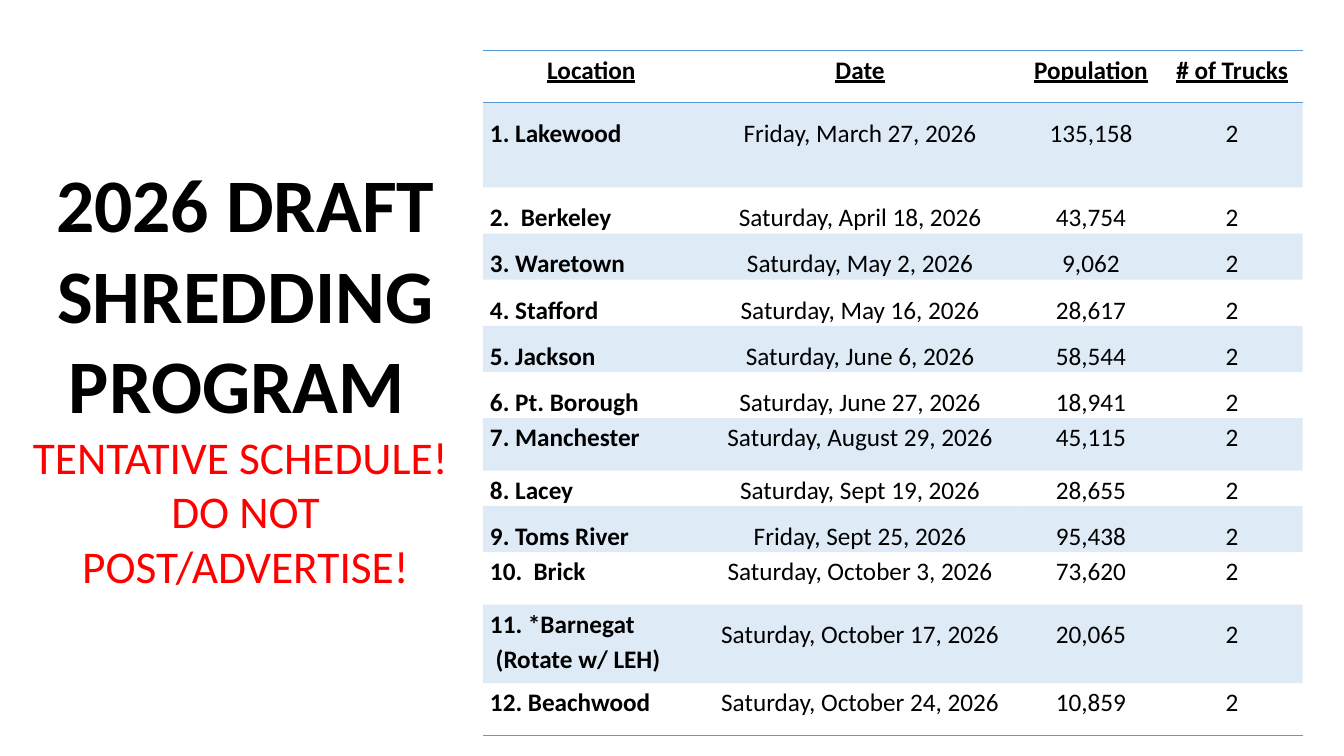
from dataclasses import dataclass

from lxml.etree import SubElement
from pptx import Presentation
from pptx.dml.color import RGBColor
from pptx.enum.text import MSO_ANCHOR, MSO_AUTO_SIZE, PP_ALIGN
from pptx.oxml import parse_xml
from pptx.oxml.ns import nsdecls, qn
from pptx.util import Inches, Pt


@dataclass(frozen=True)
class Theme:
    font: str = "Calibri"
    text: str = "000000"
    warning: str = "FF0000"
    accent: str = "5B9BD5"
    band_opacity: int = 20
    title_size: float = 54
    warning_size: float = 32.4
    table_size: float = 18


THEME = Theme()
NO_STYLE = "{2D5ABB26-0587-4C30-8999-92F81FD0307C}"
TIGHT, ROOMY = 1.15, 1.5
COLUMN_WIDTHS = (2.15, 3.18, 1.4, 1.4)
HEADERS = ("Location", "Date", "Population", "# of Trucks")
HEADER_HEIGHT = 0.52
TRUCKS = "2"
# location, date, population, row height, line spacing
STOPS = [
    ("1. Lakewood", "Friday, March 27, 2026", "135,158", 0.84, ROOMY),
    ("2.  Berkeley", "Saturday, April 18, 2026", "43,754", 0.42, ROOMY),
    ("3. Waretown", "Saturday, May 2, 2026", "9,062", 0.42, ROOMY),
    ("4. Stafford", "Saturday, May 16, 2026", "28,617", 0.42, ROOMY),
    ("5. Jackson", "Saturday, June 6, 2026", "58,544", 0.42, ROOMY),
    ("6. Pt. Borough", "Saturday, June 27, 2026", "18,941", 0.42, ROOMY),
    ("7. Manchester", "Saturday, August 29, 2026", "45,115", 0.52, TIGHT),
    ("8. Lacey", "Saturday, Sept 19, 2026", "28,655", 0.35, TIGHT),
    ("9. Toms River", "Friday, Sept 25, 2026", "95,438", 0.42, ROOMY),
    ("10.  Brick", "Saturday, October 3, 2026", "73,620", 0.52, TIGHT),
    ("11. *Barnegat\n (Rotate w/ LEH)", "Saturday, October 17, 2026", "20,065", 0.78, ROOMY),
    ("12. Beachwood", "Saturday, October 24, 2026", "10,859", 0.52, TIGHT),
]


def style_font(font, size, color, bold, underline=False):
    font.name = THEME.font
    font.size = Pt(size)
    font.color.rgb = RGBColor.from_string(color)
    font.bold = bold
    font.underline = underline


def add_title(slide):
    sp = slide.shapes.title
    sp.left, sp.top = Inches(0.08), Inches(3.09)
    sp.width, sp.height = Inches(4.71), Inches(1.8)
    tf = sp.text_frame
    tf.word_wrap = True
    tf.auto_size = MSO_AUTO_SIZE.NONE
    tf.vertical_anchor = MSO_ANCHOR.MIDDLE
    tf.margin_bottom = Inches(0.6)
    p = tf.paragraphs[0]
    p.alignment = PP_ALIGN.CENTER
    r = p.add_run()
    r.text = "2026 DRAFT SHREDDING PROGRAM "
    style_font(r.font, THEME.title_size, THEME.text, True)
    for line in ("TENTATIVE SCHEDULE! ", "DO NOT POST/ADVERTISE!"):
        p.add_line_break()
        r = p.add_run()
        r.text = line
        style_font(r.font, THEME.warning_size, THEME.warning, False)


def fill_cell(cell, banded):
    if not banded:
        cell.fill.background()
        return
    cell.fill.solid()
    cell.fill.fore_color.rgb = RGBColor.from_string(THEME.accent)
    color = cell._tc.tcPr.find(".//" + qn("a:srgbClr"))
    SubElement(color, qn("a:alpha"), val=str(THEME.band_opacity * 1000))


def add_borders(cell, sides):
    """Draw accent rules; sides holds "T" and/or "B"."""
    for side in sorted(sides):
        cell._tc.tcPr.insert(0, parse_xml(
            f'<a:ln{side} {nsdecls("a")} w="12700"><a:solidFill>'
            f'<a:srgbClr val="{THEME.accent}"/></a:solidFill></a:ln{side}>'))


def write_cell(cell, text, spacing, align, bold, underline=False):
    cell.margin_left = cell.margin_right = Inches(0.07)
    cell.margin_top = cell.margin_bottom = 0
    cell.text = text
    paragraphs = cell.text_frame.paragraphs
    multiline = len(paragraphs) > 1
    for p in paragraphs:
        p.alignment = align
        p.line_spacing = TIGHT if multiline else spacing
        p.space_after = Pt(0 if multiline else 10)
        style_font(p.font, THEME.table_size, THEME.text, bold, underline)


def add_schedule(slide):
    heights = [HEADER_HEIGHT] + [stop[3] for stop in STOPS]
    frame = slide.shapes.add_table(
        len(heights), len(HEADERS), Inches(4.79), Inches(0.5),
        Inches(sum(COLUMN_WIDTHS)), Inches(sum(heights)))
    table = frame.table
    table.first_row = table.horz_banding = False
    table._tbl.tblPr.find(qn("a:tableStyleId")).text = NO_STYLE
    for column, width in zip(table.columns, COLUMN_WIDTHS):
        column.width = Inches(width)
    for row, height in zip(table.rows, heights):
        row.height = Inches(height)

    for col, header in enumerate(HEADERS):
        cell = table.cell(0, col)
        write_cell(cell, header, TIGHT, PP_ALIGN.CENTER, True, True)
        fill_cell(cell, False)
        add_borders(cell, "TB")

    for row, (location, date, population, _, spacing) in enumerate(STOPS, 1):
        for col, text in enumerate((location, date, population, TRUCKS)):
            cell = table.cell(row, col)
            align = PP_ALIGN.CENTER if col else PP_ALIGN.LEFT
            write_cell(cell, text, spacing, align, col == 0)
            fill_cell(cell, row % 2 == 1)
            if row == len(STOPS):
                add_borders(cell, "B")


def main():
    prs = Presentation()
    prs.slide_width, prs.slide_height = Inches(13.33), Inches(7.5)
    slide = prs.slides.add_slide(prs.slide_layouts[5])
    add_title(slide)
    add_schedule(slide)
    prs.save("out.pptx")


if __name__ == "__main__":
    main()
